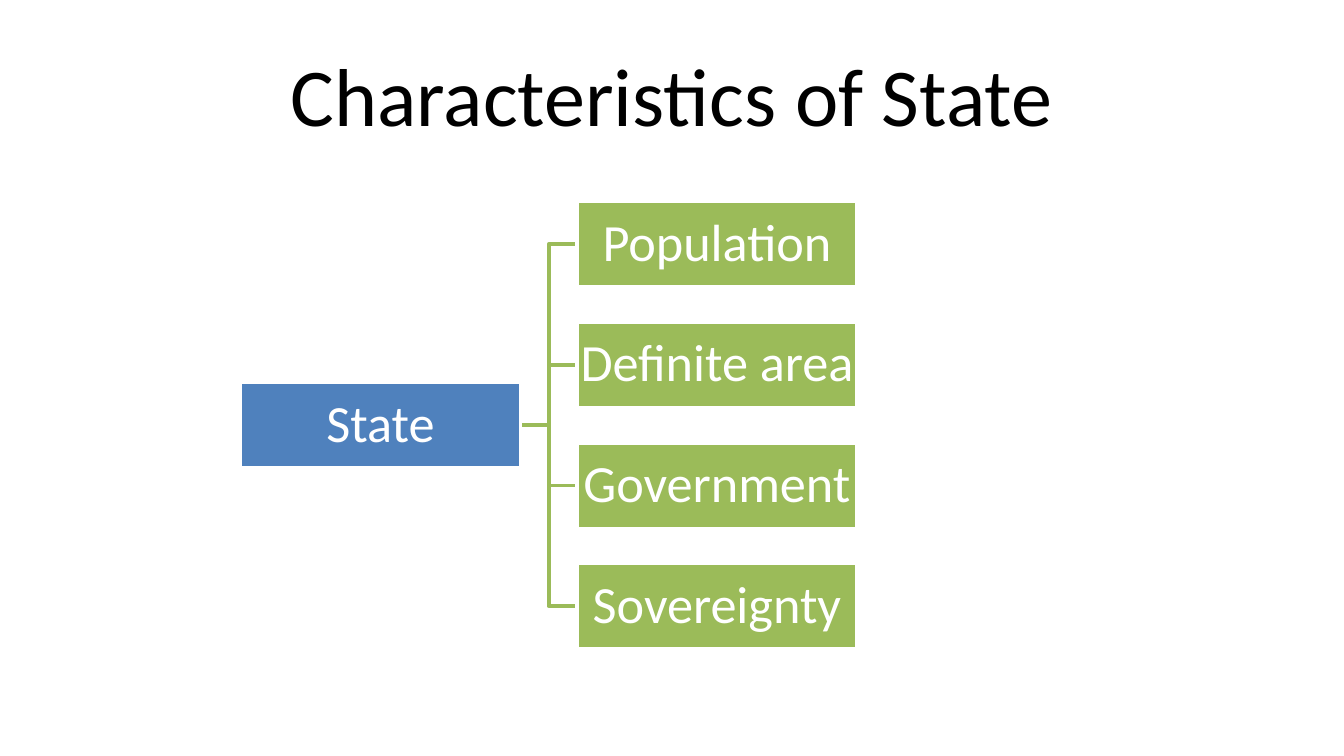
from dataclasses import dataclass

from pptx import Presentation
from pptx.dml.color import RGBColor
from pptx.enum.shapes import MSO_SHAPE
from pptx.enum.text import MSO_ANCHOR, PP_ALIGN
from pptx.shapes.autoshape import Shape
from pptx.slide import Slide
from pptx.util import Cm, Pt

RECTANGLE = MSO_SHAPE.RECTANGLE
MIDDLE = MSO_ANCHOR.MIDDLE
CENTER = PP_ALIGN.CENTER

COLORS = {"title": "000000", "root": "4F81BD", "branch": "9BBB59", "white": "FFFFFF"}
FONT = "Calibri"
LINE_WIDTH = Pt(2)

# Lengths in centimetres
BOX_WIDTH, BOX_HEIGHT = 5.3, 1.62
ROOT_LEFT, BRANCH_LEFT = 4.54, 10.9
BRANCH_TOP, BRANCH_PITCH = 3.81, 2.28
CHARACTERISTICS = ["Population", "Definite area", "Government", "Sovereignty"]


@dataclass
class Node:
    label: str
    left: float
    top: float
    color: str

    @property
    def middle(self) -> float:
        return self.top + BOX_HEIGHT / 2


def rgb(color: str) -> RGBColor:
    return RGBColor.from_string(COLORS[color])


def write_text(shape: Shape, text: str, *, size: float, color: str,
               inset: float, line_spacing: float = 1.0) -> None:
    frame = shape.text_frame
    frame.word_wrap = True
    frame.vertical_anchor = MIDDLE
    frame.margin_left = frame.margin_right = Cm(inset)
    frame.margin_top = frame.margin_bottom = Cm(inset)
    paragraph = frame.paragraphs[0]
    paragraph.alignment = CENTER
    paragraph.line_spacing = line_spacing
    run = paragraph.add_run()
    run.text = text
    run.font.name = FONT
    run.font.size = Pt(size)
    run.font.color.rgb = rgb(color)


def style_line(shape: Shape, color: str) -> None:
    shape.shadow.inherit = False
    shape.line.color.rgb = rgb(color)
    shape.line.width = LINE_WIDTH


def draw_node(slide: Slide, node: Node) -> None:
    box = slide.shapes.add_shape(RECTANGLE, Cm(node.left), Cm(node.top),
                                 Cm(BOX_WIDTH), Cm(BOX_HEIGHT))
    box.fill.solid()
    box.fill.fore_color.rgb = rgb(node.color)
    style_line(box, "white")
    write_text(box, node.label, size=28, color="white", inset=0.05, line_spacing=0.9)


def draw_elbow(slide: Slide, parent: Node, child: Node) -> None:
    start = parent.left + BOX_WIDTH
    bend = (start + child.left) / 2
    builder = slide.shapes.build_freeform(Cm(start), Cm(parent.middle))
    corners = [(bend, parent.middle), (bend, child.middle), (child.left, child.middle)]
    builder.add_line_segments([(Cm(x), Cm(y)) for x, y in corners], close=False)
    elbow = builder.convert_to_shape()
    elbow.fill.background()
    style_line(elbow, "branch")


def main() -> None:
    presentation = Presentation()
    presentation.slide_width, presentation.slide_height = Cm(25.4), Cm(14.29)
    slide = presentation.slides.add_slide(presentation.slide_layouts[5])

    title = slide.shapes.title
    title.left, title.top = Cm(1.27), Cm(0.58)
    title.width, title.height = Cm(22.86), Cm(2.38)
    write_text(title, "Characteristics of State", size=44, color="title", inset=0.13)

    branches = [Node(label, BRANCH_LEFT, BRANCH_TOP + row * BRANCH_PITCH, "branch")
                for row, label in enumerate(CHARACTERISTICS)]
    root_top = (branches[0].top + branches[-1].top) / 2
    root = Node("State", ROOT_LEFT, root_top, "root")

    for branch in branches:
        draw_elbow(slide, root, branch)
    for node in [root, *branches]:
        draw_node(slide, node)

    presentation.save("out.pptx")


if __name__ == "__main__":
    main()
